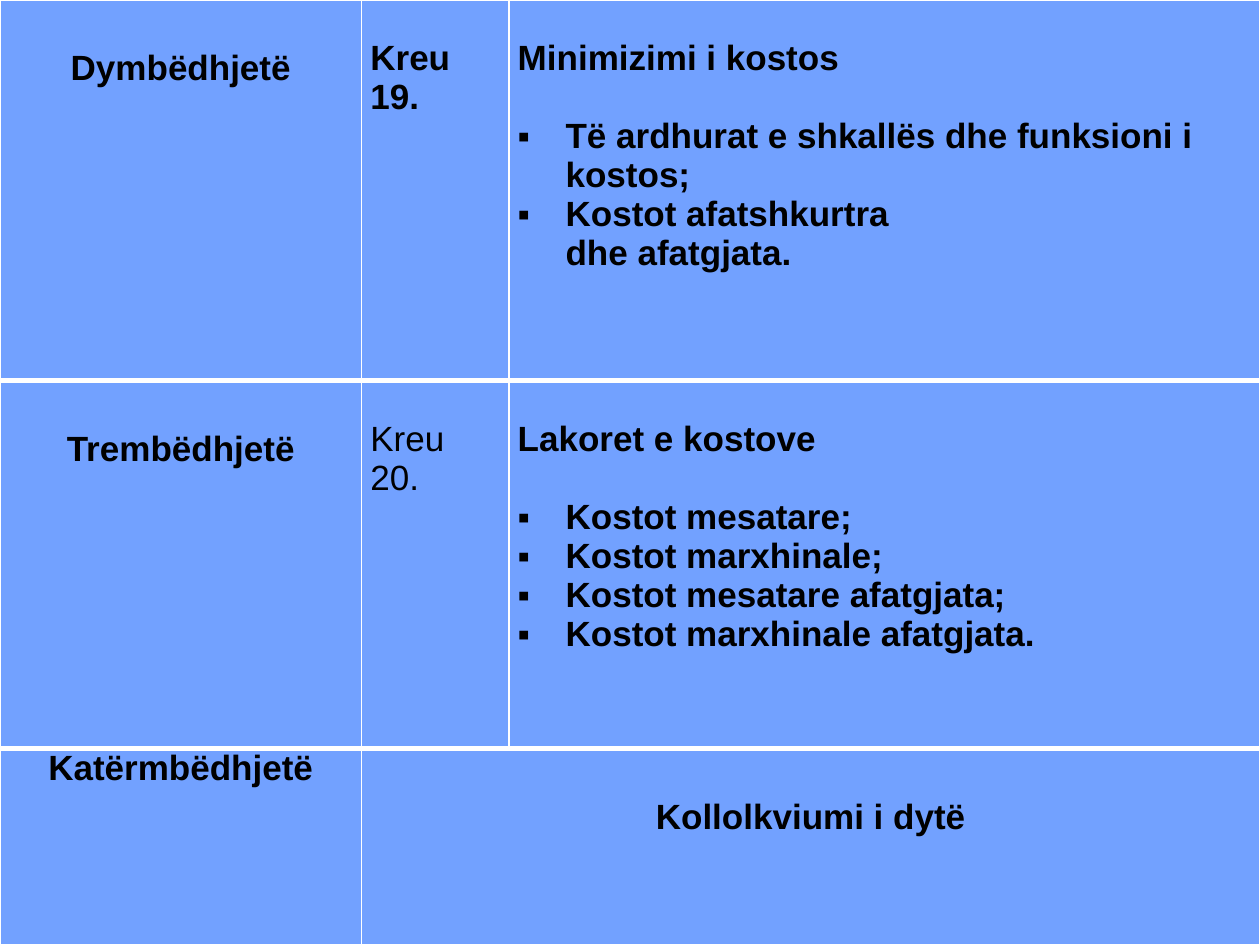
from lxml import etree
from pptx import Presentation
from pptx.dml.color import RGBColor
from pptx.enum.text import PP_ALIGN
from pptx.oxml.ns import qn
from pptx.util import Inches, Pt

LEFT, CENTER, JUSTIFY = PP_ALIGN.LEFT, PP_ALIGN.CENTER, PP_ALIGN.JUSTIFY

THEME = {
    "font": "Arial",
    "size": 20,
    "text": "000000",
    "fill": "72A1FF",
    "border": "FFFFFF",
    "background": "00349E",
    "thin": 1,
    "thick": 3,
}

SLIDE_WIDTH, SLIDE_HEIGHT = 10, 7.5
COLUMN_SHARES = [0.287, 0.117, 0.596]
ROW_HEIGHTS = [3.02, 2.92, 1.56]
SIDE_MARGIN = 0.07
LINE_HEIGHT = 0.31
CENTERED_TOP = 0.39
HANG = 0.38
BULLET = "▪"

WEEKS = [
    {
        "week": "Dymbëdhjetë",
        "chapter": "Kreu 19.",
        "chapter_bold": True,
        "topic": "Minimizimi i kostos",
        "align": LEFT,
        "points": [
            (BULLET, "Të ardhurat e shkallës dhe funksioni i kostos;"),
            (BULLET, "Kostot afatshkurtra"),
            (None, "dhe afatgjata."),
        ],
    },
    {
        "week": "Trembëdhjetë",
        "chapter": "Kreu 20.",
        "chapter_bold": False,
        "topic": "Lakoret e kostove",
        "align": JUSTIFY,
        "points": [
            (BULLET, "Kostot mesatare;"),
            (BULLET, "Kostot marxhinale;"),
            (BULLET, "Kostot mesatare afatgjata;"),
            (BULLET, "Kostot marxhinale afatgjata."),
        ],
    },
]
EXAM = {"week": "Katërmbëdhjetë", "title": "Kollolkviumi i dytë"}


def color(name):
    return RGBColor.from_string(THEME[name])


def style_cell(cell, row, last_row):
    cell.fill.solid()
    cell.fill.fore_color.rgb = color("fill")
    cell.margin_left = cell.margin_right = Inches(SIDE_MARGIN)
    cell.margin_top = cell.margin_bottom = 0
    widths = {
        "lnL": THEME["thin"],
        "lnR": THEME["thin"],
        "lnT": THEME["thick"] if row > 0 else THEME["thin"],
        "lnB": THEME["thick"] if row < last_row else THEME["thin"],
    }
    properties = cell._tc.get_or_add_tcPr()
    for position, (side, width) in enumerate(widths.items()):
        line = etree.Element(qn(f"a:{side}"), w=str(Pt(width)))
        fill = etree.SubElement(line, qn("a:solidFill"))
        etree.SubElement(fill, qn("a:srgbClr"), val=THEME["border"])
        properties.insert(position, line)


def write_paragraph(paragraph, text, align=LEFT, bold=True):
    paragraph.text = text
    paragraph.alignment = align
    for run in paragraph.runs:
        run.font.name = THEME["font"]
        run.font.size = Pt(THEME["size"])
        run.font.bold = bold
        run.font.color.rgb = color("text")


def write_cell(cell, text, top=0, align=LEFT, bold=True):
    cell.margin_top = Inches(top)
    write_paragraph(cell.text_frame.paragraphs[0], text, align, bold)


def add_point(text_frame, bullet, text, align):
    paragraph = text_frame.add_paragraph()
    write_paragraph(paragraph, text, align)
    properties = paragraph._p.get_or_add_pPr()
    properties.set("marL", str(Inches(HANG)))
    properties.set("indent", str(-Inches(HANG) if bullet else 0))
    if bullet:
        etree.SubElement(properties, qn("a:buFont"), typeface=THEME["font"])
        etree.SubElement(properties, qn("a:buChar"), char=bullet)
    return paragraph


def write_week(table, row, week):
    week_cell, chapter_cell, topic_cell = table.rows[row].cells
    write_cell(week_cell, week["week"], CENTERED_TOP, CENTER)
    write_cell(chapter_cell, week["chapter"], LINE_HEIGHT, bold=week["chapter_bold"])
    write_cell(topic_cell, week["topic"], LINE_HEIGHT, week["align"])
    points = [
        add_point(topic_cell.text_frame, bullet, text, week["align"])
        for bullet, text in week["points"]
    ]
    points[0].space_before = Inches(LINE_HEIGHT)


def main():
    presentation = Presentation()
    presentation.slide_width = Inches(SLIDE_WIDTH)
    presentation.slide_height = Inches(SLIDE_HEIGHT)
    slide = presentation.slides.add_slide(presentation.slide_layouts[6])
    slide.background.fill.solid()
    slide.background.fill.fore_color.rgb = color("background")

    table = slide.shapes.add_table(
        len(ROW_HEIGHTS), len(COLUMN_SHARES), 0, 0,
        presentation.slide_width, presentation.slide_height,
    ).table
    table.first_row = table.horz_banding = False
    for column, share in zip(table.columns, COLUMN_SHARES):
        column.width = Inches(share * SLIDE_WIDTH)
    last_row = len(ROW_HEIGHTS) - 1
    for index, (row, height) in enumerate(zip(table.rows, ROW_HEIGHTS)):
        row.height = Inches(height)
        for cell in row.cells:
            style_cell(cell, index, last_row)

    for index, week in enumerate(WEEKS):
        write_week(table, index, week)
    exam_cell = table.cell(last_row, 1)
    exam_cell.merge(table.cell(last_row, 2))
    write_cell(table.cell(last_row, 0), EXAM["week"], align=CENTER)
    write_cell(exam_cell, EXAM["title"], CENTERED_TOP, CENTER)

    presentation.save("out.pptx")


if __name__ == "__main__":
    main()
